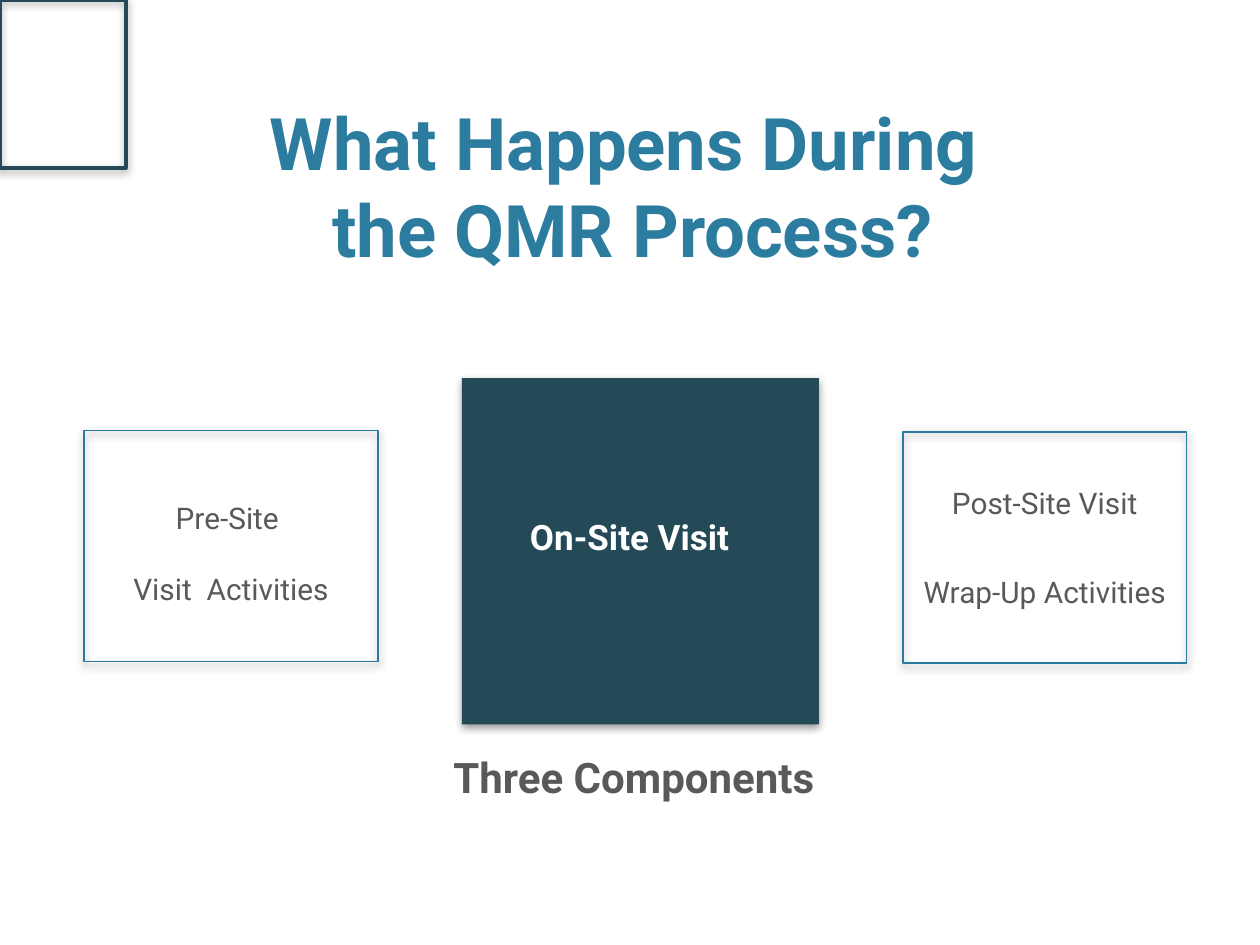
import lxml.etree
import pptx
import pptx.dml.color
import pptx.enum.shapes
import pptx.enum.text
import pptx.oxml.ns
import pptx.util

COLS, ROWS = 120, 90
TEAL, BLUE, DARK, GREY, WHITE = "244A58", "2C7C9F", "287A9E", "595959", "FFFFFF"
MID = pptx.enum.text.PP_ALIGN.CENTER
LEFT = pptx.enum.text.PP_ALIGN.LEFT


def tint(code):
    return pptx.dml.color.RGBColor.from_string(code)


class Deck:
    font = "Roboto"

    def __init__(self):
        self.file = pptx.Presentation()
        self.file.slide_width = pptx.util.Inches(10)
        self.file.slide_height = pptx.util.Inches(7.5)
        self.slide = self.file.slides.add_slide(self.file.slide_layouts[6])

    def grid(self, left, top, wide, high):
        """Turn columns and rows into slide lengths."""
        col = self.file.slide_width / COLS
        row = self.file.slide_height / ROWS
        return [round(n) for n in (left * col, top * row, wide * col, high * row)]

    def box(self, place, fill=None, line=None, width=1):
        shape = self.slide.shapes.add_shape(
            pptx.enum.shapes.MSO_SHAPE.RECTANGLE, *self.grid(*place))
        if fill:
            shape.fill.solid()
            shape.fill.fore_color.rgb = tint(fill)
        else:
            shape.fill.background()
        if line:
            shape.line.color.rgb = tint(line)
            shape.line.width = pptx.util.Pt(width)
        else:
            shape.line.fill.background()
        self.shade(shape)

    def shade(self, shape):
        """Give the shape a soft shadow straight below it."""
        shape.shadow.inherit = False
        name = pptx.oxml.ns.qn
        effect = shape.element.spPr.find(name("a:effectLst"))
        outer = lxml.etree.SubElement(
            effect, name("a:outerShdw"), blurRad=str(pptx.util.Pt(5)),
            dist=str(pptx.util.Pt(2)), dir="5400000", rotWithShape="0")
        black = lxml.etree.SubElement(outer, name("a:srgbClr"), val="000000")
        lxml.etree.SubElement(black, name("a:alpha"), val="40000")

    def frame(self, place):
        frame = self.slide.shapes.add_textbox(*self.grid(*place)).text_frame
        frame.word_wrap = True
        return frame

    def run(self, para, words, size, color, bold=False):
        run = para.add_run()
        run.text = words
        run.font.name = self.font
        run.font.size = pptx.util.Pt(size)
        run.font.bold = bold
        run.font.color.rgb = tint(color)

    def title(self, place, lines, size, color):
        frame = self.frame(place)
        frame.vertical_anchor = pptx.enum.text.MSO_ANCHOR.BOTTOM
        para = frame.paragraphs[0]
        para.alignment = MID
        for i, words in enumerate(lines):
            if i:
                para.add_line_break()
            self.run(para, words, size, color, True)

    def text(self, place, lines, size, color, bold=False, align=LEFT,
             space=None, after=0):
        frame = self.frame(place)
        for i, words in enumerate(lines):
            para = frame.add_paragraph() if i else frame.paragraphs[0]
            para.alignment = align
            para.space_before = pptx.util.Pt(20)
            para.space_after = pptx.util.Pt(after)
            para.line_spacing = space
            props = para._p.get_or_add_pPr()
            indent = pptx.util.Inches(0.38)
            props.set("marL", str(indent))
            props.set("indent", str(-indent))
            self.run(para, words, size, color, bold)


def main():
    deck = Deck()
    deck.title((7.5, 9, 105.5, 17.5),
               ["What Happens During ", "the QMR Process?"], 41.4, BLUE)
    deck.text((42, 71, 40.5, 9), ["Three Components"], 24, GREY, True)

    deck.box((8, 41, 28, 22), line=DARK)
    deck.box((44, 36, 34, 33), fill=TEAL)
    deck.box((86, 41.15, 27, 22), line=DARK)

    deck.text((8, 47, 28, 12), ["Pre-Site ", "Visit  Activities"],
              17, GREY, align=MID)
    deck.text((49.3, 48.5, 24, 6), ["On-Site Visit"], 20, WHITE, True)
    deck.text((85, 46, 29, 15), ["Post-Site Visit", "Wrap-Up Activities"],
              17, GREY, align=MID, space=0.9, after=12)

    deck.box((0, 0, 12, 16), line=TEAL, width=2)
    deck.file.save("out.pptx")


if __name__ == "__main__":
    main()
